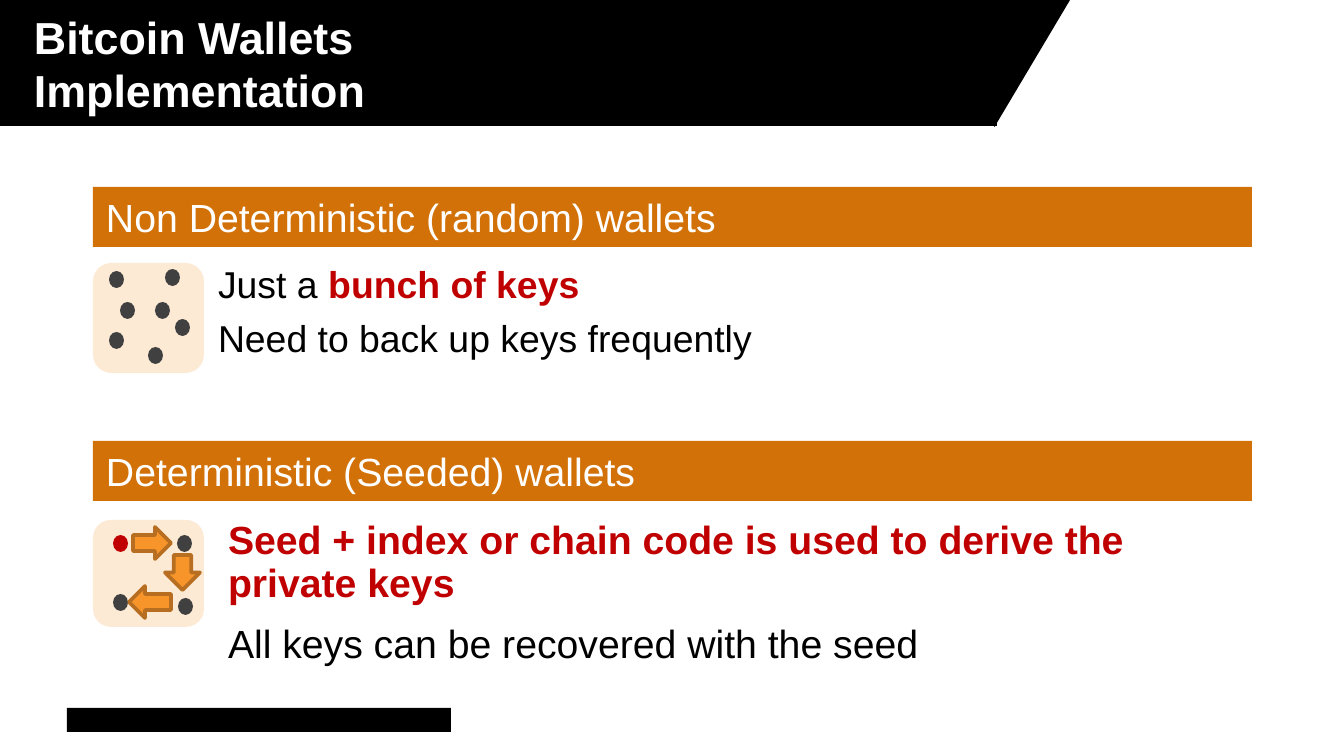
from dataclasses import dataclass

from pptx import Presentation
from pptx.dml.color import RGBColor
from pptx.enum.shapes import MSO_SHAPE
from pptx.enum.text import MSO_ANCHOR, PP_ALIGN
from pptx.util import Pt

EMU_PER_PX = 914400 / 134.4
FONT = "Arial"
BLACK, WHITE = "000000", "FFFFFF"
ORANGE, CREAM, RED, GREY = "D27108", "FDEAD5", "C00000", "404040"
ARROW_FILL, ARROW_LINE = "F7952B", "B76E20"

RECT = MSO_SHAPE.RECTANGLE
ROUNDED = MSO_SHAPE.ROUNDED_RECTANGLE
OVAL = MSO_SHAPE.OVAL
TRIANGLE = MSO_SHAPE.ISOSCELES_TRIANGLE
PROCESS = MSO_SHAPE.FLOWCHART_PROCESS
RIGHT = MSO_SHAPE.RIGHT_ARROW
LEFT = MSO_SHAPE.LEFT_ARROW
DOWN = MSO_SHAPE.DOWN_ARROW
ANCHOR_TOP, ANCHOR_MIDDLE = MSO_ANCHOR.TOP, MSO_ANCHOR.MIDDLE
ALIGN_LEFT = PP_ALIGN.LEFT


@dataclass(frozen=True)
class Box:
    left: int
    top: int
    width: int
    height: int


@dataclass(frozen=True)
class Span:
    text: str
    color: str = BLACK
    bold: bool = False


@dataclass(frozen=True)
class Arrow:
    kind: MSO_SHAPE
    box: Box


@dataclass(frozen=True)
class Key:
    left: int
    top: int
    color: str = GREY


@dataclass(frozen=True)
class Wallet:
    heading: str
    banner_top: int
    panel: Box
    keys: tuple[Key, ...]
    arrows: tuple[Arrow, ...]
    notes: Box
    margins: tuple[int, int]
    size: int
    space_before: int
    line_spacing: float
    lines: tuple[tuple[Span, ...], ...]


WALLETS = (
    Wallet(
        "Non Deterministic (random) wallets", 187, Box(93, 263, 111, 110),
        (Key(109, 271), Key(148, 347), Key(120, 302), Key(155, 302),
         Key(165, 269), Key(109, 332), Key(175, 319)),
        (),
        Box(218, 261, 1034, 112), (0, 0), 20, 5, 1.0,
        ((Span("Just a "), Span("bunch of keys", RED, True)),
         (Span("Need to back up keys frequently"),)),
    ),
    Wallet(
        "Deterministic (Seeded) wallets", 441, Box(93, 520, 111, 107),
        (Key(113, 535, RED), Key(113, 594), Key(177, 535), Key(178, 598)),
        (Arrow(RIGHT, Box(133, 527, 38, 32)),
         Arrow(LEFT, Box(129, 586, 42, 32)),
         Arrow(DOWN, Box(165, 555, 35, 35))),
        Box(218, 516, 1034, 90), (10, 5), 21, 10, 0.9,
        ((Span("Seed + index or chain code is used to derive the private keys", RED, True),),
         (Span("All keys can be recovered with the seed"),)),
    ),
)


def px(length: int) -> int:
    return round(length * EMU_PER_PX)


def rgb(value: str) -> RGBColor:
    return RGBColor.from_string(value)


def place(box: Box) -> tuple[int, int, int, int]:
    return px(box.left), px(box.top), px(box.width), px(box.height)


def add_block(slide, kind: MSO_SHAPE, box: Box, fill: str, outline: str | None = None):
    block = slide.shapes.add_shape(kind, *place(box))
    block.shadow.inherit = False
    block.fill.solid()
    block.fill.fore_color.rgb = rgb(fill)
    if outline:
        block.line.color.rgb = rgb(outline)
        block.line.width = Pt(2)
    else:
        block.line.fill.background()
    return block


def set_frame(frame, anchor: MSO_ANCHOR, margins: tuple[int, int, int, int], wrap: bool) -> None:
    frame.word_wrap = wrap
    frame.vertical_anchor = anchor
    frame.margin_left, frame.margin_top, frame.margin_right, frame.margin_bottom = map(px, margins)


def set_font(font, size: int, color: str, bold: bool) -> None:
    font.name = FONT
    font.size = Pt(size)
    font.bold = bold
    font.color.rgb = rgb(color)


def label(block, text: str, size: int, bold: bool,
          margins: tuple[int, int, int, int], wrap: bool) -> None:
    frame = block.text_frame
    set_frame(frame, ANCHOR_MIDDLE, margins, wrap)
    frame.text = text
    for paragraph in frame.paragraphs:
        paragraph.alignment = ALIGN_LEFT
        for run in paragraph.runs:
            set_font(run.font, size, WHITE, bold)


def add_notes(slide, wallet: Wallet) -> None:
    frame = slide.shapes.add_textbox(*place(wallet.notes)).text_frame
    set_frame(frame, ANCHOR_TOP, wallet.margins * 2, True)
    for index, line in enumerate(wallet.lines):
        paragraph = frame.add_paragraph() if index else frame.paragraphs[0]
        paragraph.space_before = Pt(wallet.space_before)
        paragraph.line_spacing = wallet.line_spacing
        for span in line:
            run = paragraph.add_run()
            run.text = span.text
            set_font(run.font, wallet.size, span.color, span.bold)


def add_wallet(slide, wallet: Wallet) -> None:
    add_notes(slide, wallet)
    banner = add_block(slide, RECT, Box(93, wallet.banner_top, 1159, 60), ORANGE)
    label(banner, wallet.heading, 21, False, (13, 7, 13, 7), True)
    add_block(slide, ROUNDED, wallet.panel, CREAM)
    for key in wallet.keys:
        add_block(slide, OVAL, Box(key.left, key.top, 15, 17), key.color)
    for arrow in wallet.arrows:
        add_block(slide, arrow.kind, arrow.box, ARROW_FILL, ARROW_LINE)


def add_header(slide) -> None:
    slant = add_block(slide, TRIANGLE, Box(930, 0, 140, 127), BLACK)
    slant.adjustments[0] = 0.54
    slant.rotation = 180
    title = add_block(slide, PROCESS, Box(0, 0, 997, 126), BLACK)
    label(title, "Bitcoin Wallets\vImplementation", 24, True, (34, 0, 0, 0), False)


def main() -> None:
    deck = Presentation()
    deck.slide_width, deck.slide_height = px(1344), px(756)
    slide = deck.slides.add_slide(deck.slide_layouts[6])
    add_block(slide, RECT, Box(67, 708, 384, 24), BLACK)
    add_header(slide)
    for wallet in WALLETS:
        add_wallet(slide, wallet)
    deck.save("out.pptx")


if __name__ == "__main__":
    main()
